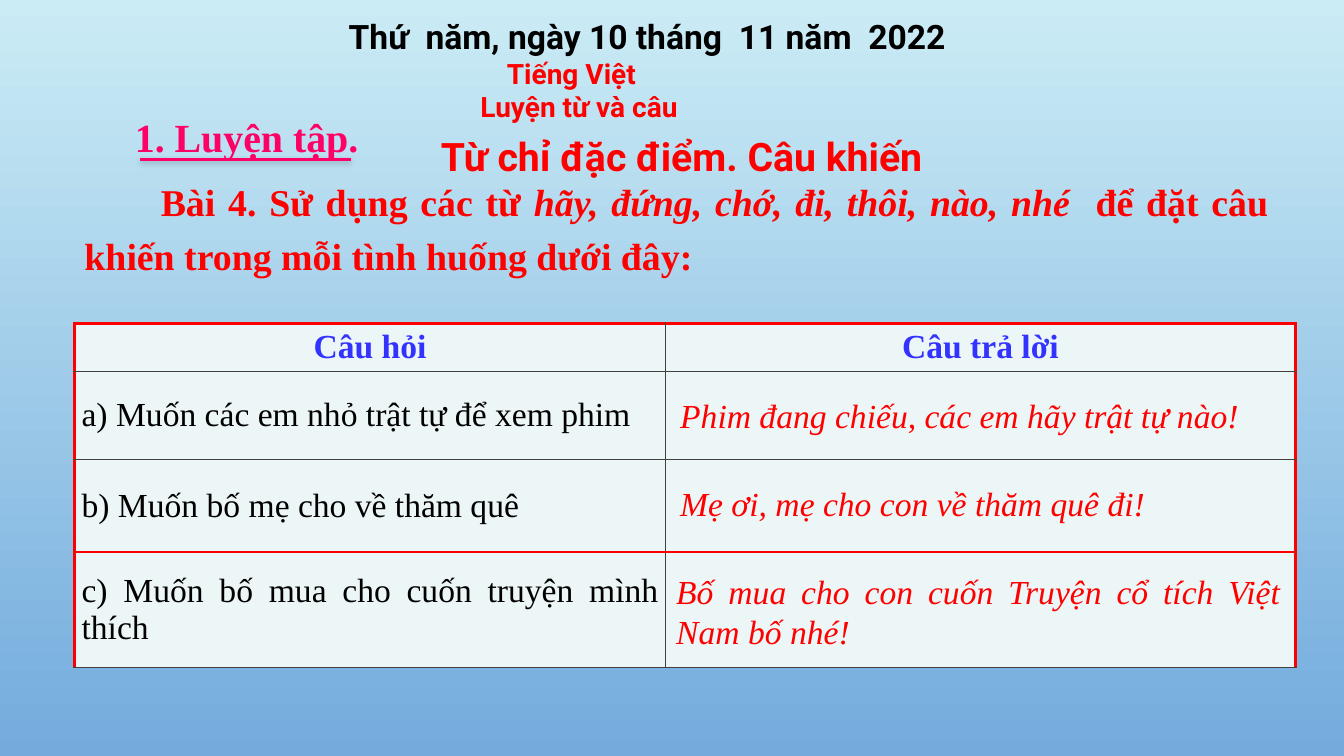
"""Build a Vietnamese grammar lesson slide with a question and answer table."""
from lxml import etree
from pptx import Presentation
from pptx.dml import color as dml
from pptx.enum import shapes, text
from pptx.oxml import ns, parse_xml
from pptx.util import Pt

SERIF, SANS = "Times New Roman", "Roboto"
RED, PINK, BLUE, BLACK, GRID = "FF0000", "FF0066", "3333FF", "000000", "404040"
LEFT, CENTER, JUSTIFY = text.PP_ALIGN.LEFT, text.PP_ALIGN.CENTER, text.PP_ALIGN.JUSTIFY


def rgb(value):
    return dml.RGBColor.from_string(value)


def add_runs(paragraph, runs, font, size, color, align=LEFT):
    paragraph.alignment = align
    for words, style in runs:
        run = paragraph.add_run()
        run.text = words
        run.font.name = font
        run.font.size = Pt(size)
        run.font.bold = "b" in style
        run.font.italic = "i" in style
        run.font.color.rgb = rgb(color)


presentation = Presentation()
presentation.slide_width, presentation.slide_height = Pt(960), Pt(540)
slide = presentation.slides.add_slide(presentation.slide_layouts[6])

background = slide.background.fill
background.gradient()
background.gradient_angle = 270
for stop, (position, color) in zip(background.gradient_stops, [(0, "CBECF5"), (1, "73ABDD")]):
    stop.position = position
    stop.color.rgb = rgb(color)

underline = slide.shapes.add_connector(
    shapes.MSO_CONNECTOR.STRAIGHT, Pt(100), Pt(113.8), Pt(250.5), Pt(113.8))
underline.line.color.rgb = rgb(PINK)
underline.line.width = Pt(1.75)
underline._element.spPr.append(parse_xml(
    f'<a:effectLst {ns.nsdecls("a")}>'
    f'<a:outerShdw blurRad="{Pt(4)}" dist="{Pt(2)}" dir="5400000" rotWithShape="0">'
    '<a:srgbClr val="000000"><a:alpha val="28000"/></a:srgbClr>'
    '</a:outerShdw></a:effectLst>'))

column_widths = [422, 450]
row_heights = [34, 63, 66.5, 82]
table = slide.shapes.add_table(
    4, 2, Pt(53.3), Pt(231), Pt(sum(column_widths)), Pt(sum(row_heights))).table
for column, width in zip(table.columns, column_widths):
    column.width = Pt(width)
for row, height in zip(table.rows, row_heights):
    row.height = Pt(height)

cell_texts = {
    (0, 0): ("Câu hỏi", "b", BLUE, CENTER),
    (0, 1): ("Câu trả lời", "b", BLUE, CENTER),
    (1, 0): ("a) Muốn các em nhỏ trật tự để xem phim", "", BLACK, LEFT),
    (2, 0): ("b) Muốn bố mẹ cho về thăm quê", "", BLACK, LEFT),
    (3, 0): ("c) Muốn bố mua cho cuốn truyện mình thích", "", BLACK, JUSTIFY),
}
thin, middle, thick = (GRID, 0.75), (RED, 1.5), (RED, 2.25)
for row in range(4):
    for column in range(2):
        cell = table.cell(row, column)
        cell.margin_left = cell.margin_right = Pt(5)
        cell.margin_top = cell.margin_bottom = Pt(2.9)
        cell.vertical_anchor = text.MSO_ANCHOR.MIDDLE
        borders = {
            "lnL": thick if column == 0 else thin,
            "lnR": thick if column == 1 else thin,
            "lnT": thick if row == 0 else middle if row == 3 else thin,
            "lnB": middle if row == 2 else thin,
        }
        properties = cell._tc.get_or_add_tcPr()
        for side, (color, width) in borders.items():
            border = etree.SubElement(properties, ns.qn(f"a:{side}"), w=str(Pt(width)))
            solid = etree.SubElement(border, ns.qn("a:solidFill"))
            etree.SubElement(solid, ns.qn("a:srgbClr"), val=color)
        cell.fill.solid()
        cell.fill.fore_color.rgb = rgb("EDF6F7")
        if (row, column) in cell_texts:
            words, style, color, align = cell_texts[row, column]
            add_runs(cell.text_frame.paragraphs[0], [(words, style)], SERIF, 24, color, align)

exercise = [
    ("Bài 4. Sử dụng các từ ", "b"),
    ("hãy, đứng, chớ, đi, thôi, nào, nhé ", "bi"),
    (" để đặt câu khiến trong mỗi tình huống dưới đây:", "b"),
]
answers = [
    "Phim đang chiếu, các em hãy trật tự nào!",
    "Mẹ ơi, mẹ cho con về thăm quê đi!",
    "Bố mua cho con cuốn Truyện cổ tích Việt Nam bố nhé!",
]
date = "Thứ  năm, ngày 10 tháng  11 năm  2022"
text_boxes = [
    ((89.3, 77, 247, 41.8),
     [([("1. Luyện tập.", "b")], SERIF, 28.5, PINK, LEFT, 0)]),
    ((53.3, 117.4, 859.7, 82), [(exercise, SERIF, 27, RED, JUSTIFY, 54.5)]),
    ((478.8, 278.6, 431.3, 36), [([(answers[0], "i")], SERIF, 24, RED, LEFT, 0)]),
    ((478.8, 341.3, 352, 36), [([(answers[1], "i")], SERIF, 24, RED, LEFT, 0)]),
    ((475.9, 403.9, 445.7, 65.5), [([(answers[2], "i")], SERIF, 24, RED, JUSTIFY, 0)]),
    ((242, 90.7, 489.6, 41),
     [([("Từ chỉ đặc điểm. Câu khiến", "b")], SANS, 28, RED, CENTER, 0)]),
    ((242, 7.9, 562.3, 90),
     [([(date, "b")], SANS, 24, BLACK, LEFT, 0),
      ([("Tiếng Việt", "b")], SANS, 20, RED, LEFT, 113),
      ([("Luyện từ và câu", "b")], SANS, 20, RED, LEFT, 94)]),
]
for box, paragraphs in text_boxes:
    frame = slide.shapes.add_textbox(*map(Pt, box)).text_frame
    frame.word_wrap = True
    for index, (runs, font, size, color, align, indent) in enumerate(paragraphs):
        paragraph = frame.add_paragraph() if index else frame.paragraphs[0]
        add_runs(paragraph, runs, font, size, color, align)
        if indent:
            paragraph._p.get_or_add_pPr().set("indent", str(Pt(indent)))
        if runs is exercise:
            paragraph.line_spacing = 1.2

presentation.save("out.pptx")
